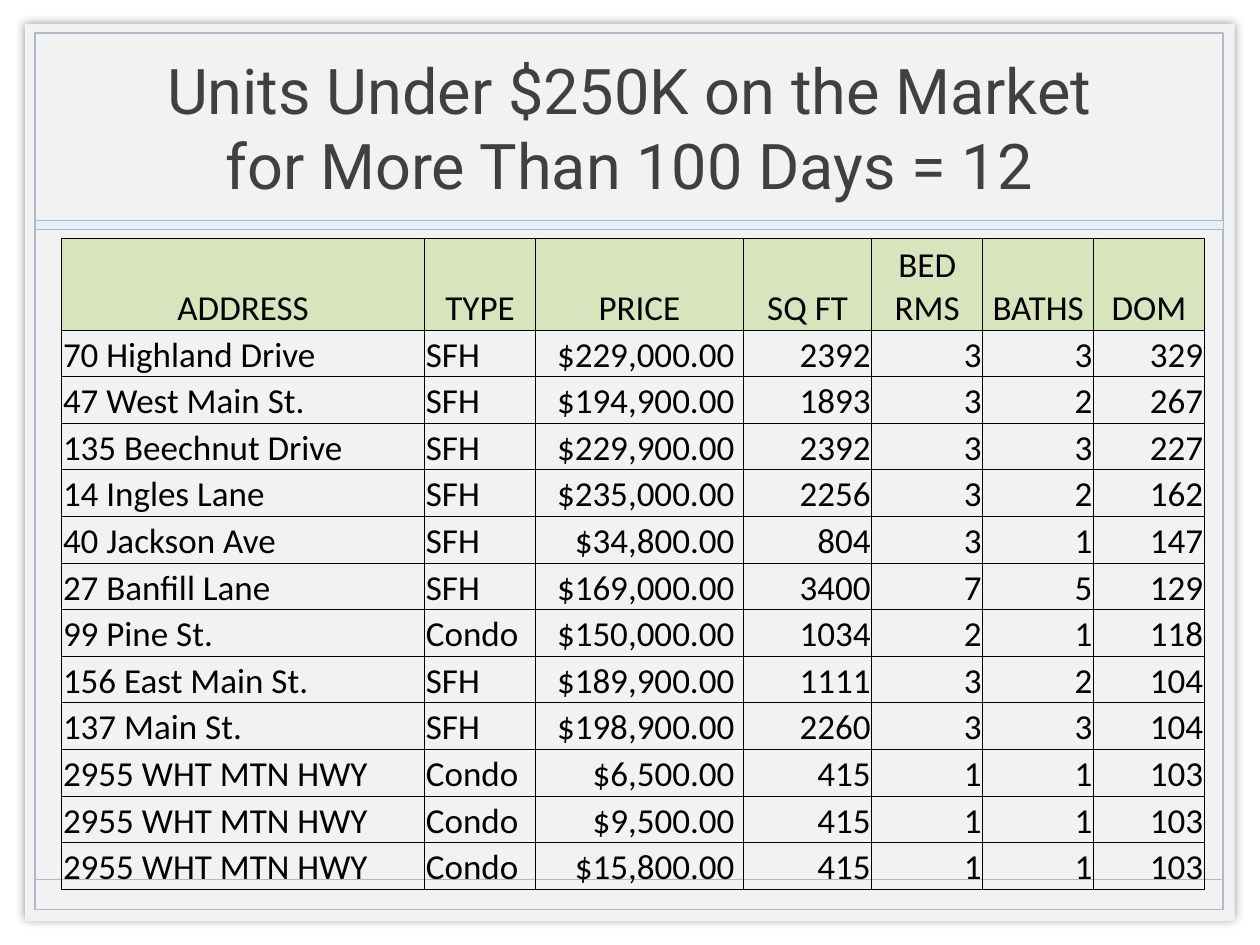
from lxml.etree import SubElement
from pptx import Presentation
from pptx.dml.color import RGBColor
from pptx.enum.shapes import MSO_CONNECTOR, MSO_SHAPE
from pptx.enum.text import MSO_ANCHOR, MSO_AUTO_SIZE, PP_ALIGN
from pptx.oxml.ns import qn
from pptx.util import Inches, Pt

# Content
TITLE = "Units Under $250K on the Market for More Than 100 Days = 12"
HEADINGS = ("ADDRESS", "TYPE", "PRICE", "SQ FT", "BED RMS", "BATHS", "DOM")
UNITS = [
    ("70 Highland Drive", "SFH", 229000, 2392, 3, 3, 329),
    ("47 West Main St.", "SFH", 194900, 1893, 3, 2, 267),
    ("135 Beechnut Drive", "SFH", 229900, 2392, 3, 3, 227),
    ("14 Ingles Lane", "SFH", 235000, 2256, 3, 2, 162),
    ("40 Jackson Ave", "SFH", 34800, 804, 3, 1, 147),
    ("27 Banfill Lane", "SFH", 169000, 3400, 7, 5, 129),
    ("99 Pine St.", "Condo", 150000, 1034, 2, 1, 118),
    ("156 East Main St.", "SFH", 189900, 1111, 3, 2, 104),
    ("137 Main St.", "SFH", 198900, 2260, 3, 3, 104),
    ("2955 WHT MTN HWY", "Condo", 6500, 415, 1, 1, 103),
    ("2955 WHT MTN HWY", "Condo", 9500, 415, 1, 1, 103),
    ("2955 WHT MTN HWY", "Condo", 15800, 415, 1, 1, 103),
]
PRICE_COLUMN = HEADINGS.index("PRICE")
TEXT_COLUMNS = 2

# Layout in inches
COLUMN_WIDTHS = (2.88, 0.88, 1.65, 1.02, 0.88, 0.88, 0.88)
HEADING_HEIGHT, UNIT_HEIGHT = 0.73, 0.37
FRAME_LEFT, FRAME_WIDTH = 0.28, 9.43
FOOTER_Y = 6.98

BLACK = RGBColor(0x00, 0x00, 0x00)
TITLE_GRAY = RGBColor(0x40, 0x40, 0x40)
PAPER = RGBColor(0xF2, 0xF2, 0xF2)
RULE_BLUE = RGBColor(0xAF, 0xBA, 0xC8)
BAND_BLUE = RGBColor(0xE4, 0xEF, 0xFC)
HEADING_GREEN = RGBColor(0xD8, 0xE4, 0xBC)


def add_panel(slide, box, fill=None, line_width=None):
    panel = slide.shapes.add_shape(MSO_SHAPE.RECTANGLE, *map(Inches, box))
    panel.shadow.inherit = False
    if fill is None:
        panel.fill.background()
    else:
        panel.fill.solid()
        panel.fill.fore_color.rgb = fill
    if line_width is None:
        panel.line.fill.background()
    else:
        panel.line.color.rgb = RULE_BLUE
        panel.line.width = Pt(line_width)
    return panel


def add_glow_shadow(panel):
    effects = panel._element.spPr.find(qn("a:effectLst"))
    shadow = SubElement(effects, qn("a:outerShdw"), blurRad=str(Pt(5)), dist="0", dir="0")
    color = SubElement(shadow, qn("a:srgbClr"), val=str(BLACK))
    SubElement(color, qn("a:alpha"), val="40000")


def add_borders(cell):
    properties = cell._tc.get_or_add_tcPr()
    for side in ("a:lnL", "a:lnR", "a:lnT", "a:lnB"):
        border = SubElement(properties, qn(side), w=str(Pt(0.5)))
        SubElement(SubElement(border, qn("a:solidFill")), qn("a:srgbClr"), val=str(BLACK))


def style_text(paragraph, font, size, color, alignment):
    paragraph.alignment = alignment
    for run in paragraph.runs:
        run.font.name, run.font.size = font, Pt(size)
        run.font.bold = False
        run.font.color.rgb = color


def fill_cell(cell, value, row, column):
    heading = row == 0
    is_price = column == PRICE_COLUMN and not heading
    cell.text_frame.text = f"${value:,.2f}" if is_price else str(value)
    cell.vertical_anchor = MSO_ANCHOR.BOTTOM
    cell.margin_left = cell.margin_top = Inches(0.01)
    cell.margin_right = Inches(0.07 if is_price else 0.01)
    cell.margin_bottom = 0
    add_borders(cell)
    if heading:
        alignment = PP_ALIGN.CENTER
        cell.fill.solid()
        cell.fill.fore_color.rgb = HEADING_GREEN
    else:
        alignment = PP_ALIGN.LEFT if column < TEXT_COLUMNS else PP_ALIGN.RIGHT
        cell.fill.background()
    style_text(cell.text_frame.paragraphs[0], "Calibri", 20, BLACK, alignment)


def main():
    presentation = Presentation()
    presentation.slide_width, presentation.slide_height = Inches(10), Inches(7.5)
    slide = presentation.slides.add_slide(presentation.slide_layouts[5])

    # Paper, frame, footer rule and band below the title
    add_glow_shadow(add_panel(slide, (0.2, 0.19, 9.6, 7.12), PAPER))
    add_panel(slide, (FRAME_LEFT, 0.26, FRAME_WIDTH, 6.96), line_width=1)
    footer_rule = slide.shapes.add_connector(
        MSO_CONNECTOR.STRAIGHT, Inches(FRAME_LEFT), Inches(FOOTER_Y),
        Inches(FRAME_LEFT + FRAME_WIDTH), Inches(FOOTER_Y))
    footer_rule.line.color.rgb = RULE_BLUE
    footer_rule.line.width = Pt(1)
    SubElement(footer_rule._element.spPr, qn("a:effectLst"))
    add_panel(slide, (FRAME_LEFT, 1.75, FRAME_WIDTH, 0.07), BAND_BLUE, 0.25)

    # Title, brought in front of the paper
    title = slide.shapes.title
    slide.shapes._spTree.append(title._element)
    title.left, title.top, title.width, title.height = map(Inches, (0.98, 0.27, 8.03, 1.47))
    title.text_frame.text = TITLE
    title.text_frame.word_wrap = True
    title.text_frame.auto_size = MSO_AUTO_SIZE.NONE
    title.text_frame.vertical_anchor = MSO_ANCHOR.MIDDLE
    style_text(title.text_frame.paragraphs[0], "Roboto", 36, TITLE_GRAY, PP_ALIGN.CENTER)

    # Table of units
    rows = [HEADINGS, *UNITS]
    table_height = HEADING_HEIGHT + UNIT_HEIGHT * len(UNITS)
    units = slide.shapes.add_table(
        len(rows), len(HEADINGS), Inches(0.49), Inches(1.89),
        Inches(sum(COLUMN_WIDTHS)), Inches(table_height)).table
    units.first_row = units.horz_banding = False
    for column, width in zip(units.columns, COLUMN_WIDTHS):
        column.width = Inches(width)
    for r, values in enumerate(rows):
        units.rows[r].height = Inches(UNIT_HEIGHT if r else HEADING_HEIGHT)
        for c, value in enumerate(values):
            fill_cell(units.cell(r, c), value, r, c)

    presentation.save("out.pptx")


if __name__ == "__main__":
    main()
